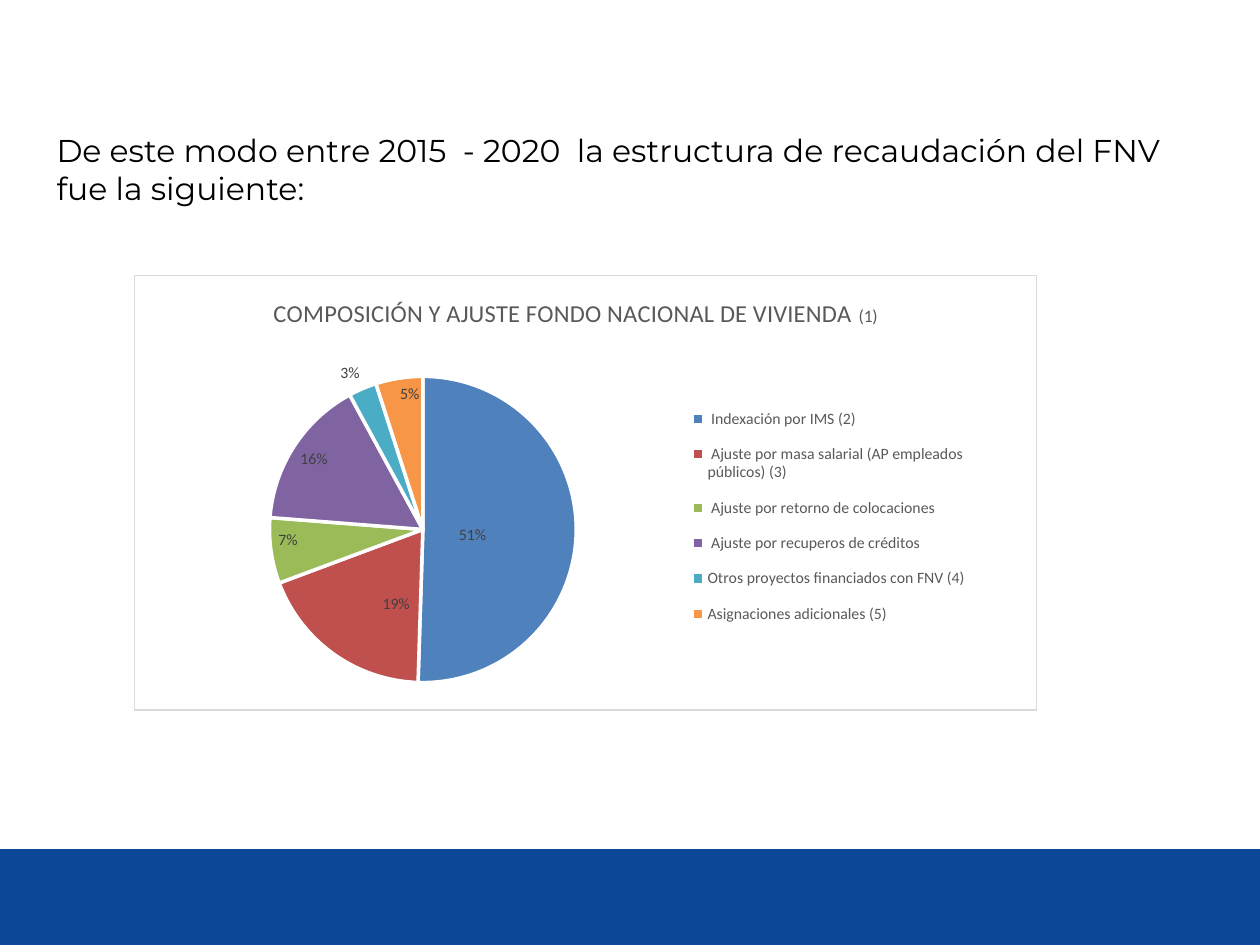
import pptx
import pptx.chart.data
import pptx.dml.color
import pptx.enum.chart
import pptx.enum.shapes
import pptx.oxml
import pptx.oxml.ns
import pptx.util

Inches, Pt = pptx.util.Inches, pptx.util.Pt
qn = pptx.oxml.ns.qn
Place = pptx.enum.chart.XL_LABEL_POSITION

# Content
INTRO = ("De este modo entre 2015  - 2020  la estructura de recaudación del FNV "
         "fue la siguiente:")
TITLE = "COMPOSICIÓN Y AJUSTE FONDO NACIONAL DE VIVIENDA "
TITLE_NOTE = "(1)"

# Source of funds, share in %, slice colour, label place, label shift (x, y)
FUNDS = [
    (" Indexación por IMS (2)", 51, "4F81BD", Place.CENTER, (-0.03, 0.01)),
    (" Ajuste por masa salarial (AP empleados públicos) (3)", 19, "C0504D",
     Place.CENTER, (0.02, 0.03)),
    (" Ajuste por retorno de colocaciones", 7, "9BBB59", Place.INSIDE_END, None),
    (" Ajuste por recuperos de créditos", 16, "8064A2", Place.INSIDE_END, None),
    ("Otros proyectos financiados con FNV (4)", 3, "4BACC6", Place.OUTSIDE_END, None),
    ("Asignaciones adicionales (5)", 5, "F79646", Place.INSIDE_END, None),
]
PERCENT = '0"%"'

THEME = {
    "band": "0B4697", "text": "000000", "label": "404040", "muted": "595959",
    "border": "D9D9D9", "white": "FFFFFF",
    "body_font": "Montserrat", "chart_font": "Calibri",
    "body": 18, "title": 14, "note": 10, "small": 9,
}


def rgb(name):
    return pptx.dml.color.RGBColor.from_string(THEME.get(name, name))


def style(font, face, size, color):
    font.name, font.size, font.bold = THEME[face], Pt(THEME[size]), False
    font.color.rgb = rgb(color)


def chart_element(xml):
    return pptx.oxml.parse_xml(
        xml.replace(">", f" {pptx.oxml.ns.nsdecls('c', 'a')}>", 1))


def set_layout(parent, after, **sizes):
    """Place a chart part by fractions of the chart area."""
    for old in parent.findall(qn("c:layout")):
        parent.remove(old)
    target = '<c:layoutTarget val="inner"/>' if after is None else ""
    modes = "" if after == "c:idx" else '<c:xMode val="edge"/><c:yMode val="edge"/>'
    values = "".join(f'<c:{key} val="{value}"/>' for key, value in sizes.items())
    layout = chart_element(
        f"<c:layout><c:manualLayout>{target}{modes}{values}</c:manualLayout></c:layout>")
    if after is None:
        parent.insert(0, layout)
    else:
        parent.find(qn(after)).addnext(layout)


def add_band(slide):
    band = slide.shapes.add_shape(
        pptx.enum.shapes.MSO_SHAPE.RECTANGLE,
        Inches(0), Inches(6.74), Inches(10), Inches(0.76))
    band.shadow.inherit = False
    band.fill.solid()
    band.fill.fore_color.rgb = rgb("band")
    band.line.fill.background()


def add_intro(slide):
    intro = slide.shapes.add_textbox(
        Inches(0.35), Inches(0.99), Inches(8.99), Inches(4.93)).text_frame
    intro.word_wrap = True
    intro.text = INTRO
    style(intro.paragraphs[0].runs[0].font, "body_font", "body", "text")


def add_fund_chart(slide):
    funds = pptx.chart.data.CategoryChartData(number_format=PERCENT)
    funds.categories = [fund[0] for fund in FUNDS]
    funds.add_series("Series 1", [fund[1] for fund in FUNDS])
    chart = slide.shapes.add_chart(
        pptx.enum.chart.XL_CHART_TYPE.PIE,
        Inches(1.06), Inches(2.18), Inches(7.17), Inches(3.46), funds).chart
    style(chart.font, "chart_font", "note", "text")

    # Square frame around the chart
    body = chart._chartSpace.find(qn("c:chart"))
    for old in chart._chartSpace.findall(qn("c:roundedCorners")):
        chart._chartSpace.remove(old)
    body.addprevious(chart_element('<c:roundedCorners ></c:roundedCorners>'))
    body.getprevious().set("val", "0")
    body.addnext(chart_element(
        f'<c:spPr><a:solidFill><a:srgbClr val="{THEME["white"]}"/></a:solidFill>'
        f'<a:ln w="{Pt(0.75)}"><a:solidFill><a:srgbClr val="{THEME["border"]}"/>'
        '</a:solidFill></a:ln></c:spPr>'))

    # Title with a smaller note mark
    heading = chart.chart_title.text_frame
    heading.text = TITLE
    heading.paragraphs[0].add_run().text = TITLE_NOTE
    for run, size in zip(heading.paragraphs[0].runs, ("title", "note")):
        style(run.font, "chart_font", size, "muted")
    set_layout(body.find(qn("c:title")), "c:tx", x=0.15, y=0.04)

    # Legend and pie area
    chart.has_legend = True
    chart.legend.position = pptx.enum.chart.XL_LEGEND_POSITION.RIGHT
    chart.legend.include_in_layout = False
    style(chart.legend.font, "chart_font", "small", "muted")
    set_layout(chart.legend._element, "c:legendPos", x=0.61, y=0.27, w=0.32, h=0.57)
    set_layout(body.find(qn("c:plotArea")), None, x=0.15, y=0.23, w=0.34, h=0.71)

    # Slices and their labels
    chart.plots[0].vary_by_categories = True
    slices = chart.plots[0].series[0].points
    for index, (_, _, color, place, shift) in enumerate(FUNDS):
        fund = slices[index]
        fund.format.fill.solid()
        fund.format.fill.fore_color.rgb = rgb(color)
        fund.format.line.color.rgb = rgb("white")
        fund.format.line.width = Pt(2)
        style(fund.data_label.font, "chart_font", "small", "label")
        fund.data_label.position = place
        label = fund.data_label._dLbl
        number_format = chart_element("<c:numFmt></c:numFmt>")
        number_format.set("formatCode", PERCENT)
        number_format.set("sourceLinked", "0")
        label.find(qn("c:idx")).addnext(number_format)
        if shift:
            set_layout(label, "c:idx", x=shift[0], y=shift[1])


def main():
    deck = pptx.Presentation()
    deck.slide_width, deck.slide_height = Inches(10), Inches(7.5)
    slide = deck.slides.add_slide(deck.slide_layouts[6])
    add_band(slide)
    add_intro(slide)
    add_fund_chart(slide)
    deck.save("out.pptx")


if __name__ == "__main__":
    main()
